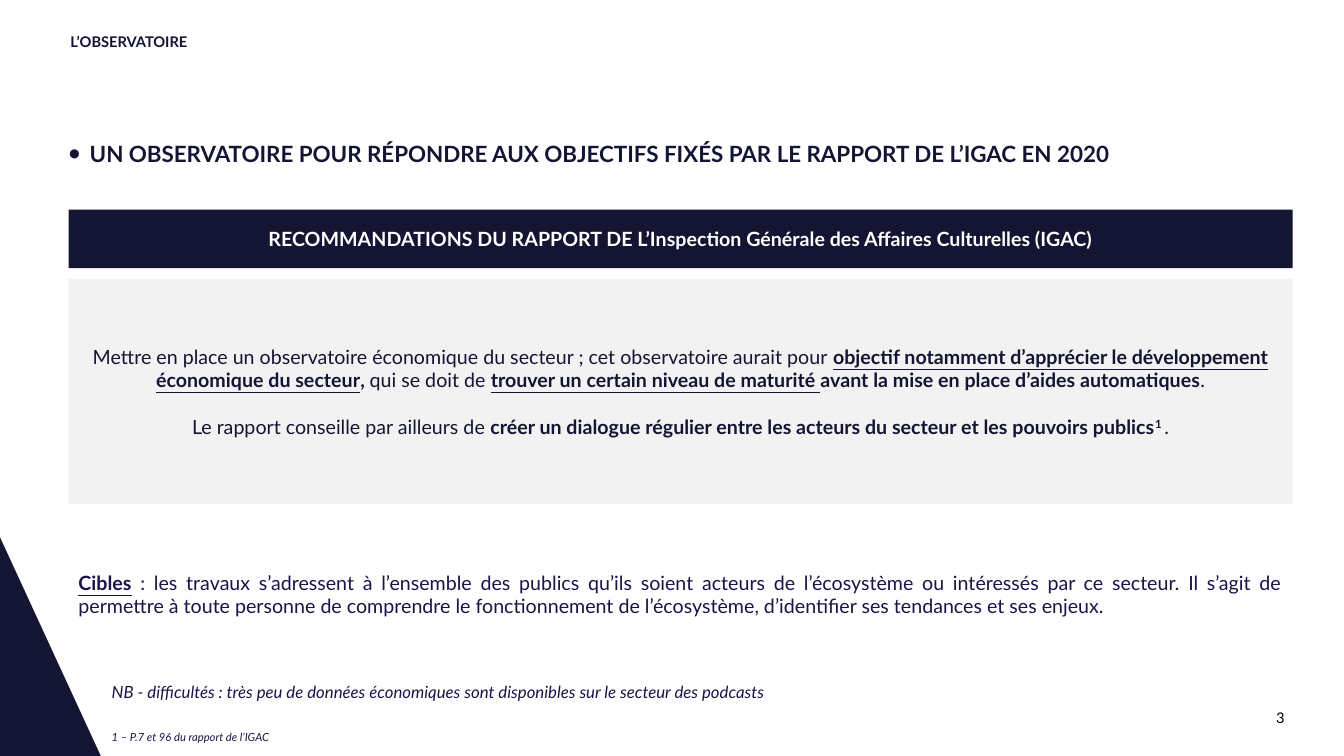
from dataclasses import dataclass

from lxml.etree import SubElement
from pptx import Presentation
from pptx.dml.color import RGBColor
from pptx.enum.shapes import MSO_SHAPE as Preset
from pptx.enum.text import MSO_ANCHOR as Anchor, PP_ALIGN as Align
from pptx.oxml.ns import qn
from pptx.shapes.autoshape import Shape
from pptx.slide import Slide
from pptx.text.text import TextFrame
from pptx.util import Pt

PX = 9144
FONT = "Lato"
NAVY = RGBColor(0x14, 0x14, 0x33)
INDIGO = RGBColor(0x1E, 0x13, 0x48)
PALE = RGBColor(0xF2, 0xF2, 0xF2)
WHITE = RGBColor(0xFF, 0xFF, 0xFF)
BLACK = RGBColor(0x00, 0x00, 0x00)


@dataclass(frozen=True)
class Span:
    """A stretch of text with its emphasis."""
    text: str
    bold: bool = False
    underline: bool = False
    italic: bool = False
    raised: bool = False


@dataclass(frozen=True)
class Block:
    """A box in px with its paragraphs and their format."""
    box: tuple[int, int, int, int]
    paragraphs: tuple[tuple[Span, ...], ...]
    size: float
    color: RGBColor
    align: Align = Align.LEFT
    anchor: Anchor = Anchor.MIDDLE
    insets: tuple[int, int, int, int] = (10, 5, 10, 5)
    fill: RGBColor | None = None
    bullet: bool = False
    line_spacing: float = 1.0


PAGE_TITLE = Block((60, 34, 591, 16), ((Span("L’OBSERVATOIRE", bold=True),),),
                   10.5, NAVY, insets=(10, 0, 10, 0), line_spacing=0.9)
HEADLINE = Block(
    (60, 134, 1214, 35),
    ((Span("UN OBSERVATOIRE POUR RÉPONDRE AUX OBJECTIFS FIXÉS PAR LE RAPPORT "
           "DE L’IGAC EN 2020", bold=True),),),
    16, NAVY, anchor=Anchor.TOP, insets=(8, 5, 10, 5), bullet=True)
RECOMMENDATIONS = Block(
    (68, 277, 1214, 223),
    ((Span("Mettre en place un observatoire économique du secteur ; "
           "cet observatoire aurait pour "),
      Span("objectif notamment d’apprécier le développement économique du secteur",
           bold=True, underline=True),
      Span(", ", bold=True),
      Span("qui se doit de "),
      Span("trouver un certain niveau de maturité ", bold=True, underline=True),
      Span("avant la mise en place d’aides automatiques", bold=True),
      Span(".")),
     (Span("Le rapport conseille par ailleurs de "),
      Span("créer un dialogue régulier entre les acteurs du secteur "
           "et les pouvoirs publics", bold=True),
      Span("1 ", bold=True, raised=True),
      Span("."))),
    14, NAVY, align=Align.CENTER, fill=PALE)
BANNER = Block(
    (68, 208, 1214, 58),
    ((Span("RECOMMANDATIONS DU RAPPORT DE L’Inspection Générale des Affaires "
           "Culturelles (IGAC)", bold=True),),),
    14, WHITE, align=Align.CENTER, fill=NAVY)
CAVEAT = Block(
    (101, 667, 1203, 38),
    ((Span("NB - difficultés : très peu de données économiques sont disponibles "
           "sur le secteur des podcasts", italic=True),),),
    12, INDIGO)
AUDIENCE = Block(
    (68, 530, 1214, 119),
    ((Span("Cibles", bold=True, underline=True),
      Span(" : les travaux s’adressent à l’ensemble des publics qu’ils soient "
           "acteurs de l’écosystème ou intéressés par ce secteur. Il s’agit de "
           "permettre à toute personne de comprendre le fonctionnement de "
           "l’écosystème, d’identifier ses tendances et ses enjeux.")),),
    14, INDIGO, align=Align.JUSTIFY)
FOOTNOTE = Block((101, 712, 1203, 38),
                 ((Span("1 – P.7 et 96 du rapport de l’IGAC", italic=True),),),
                 8, INDIGO)
PAGE_NUMBER = Block((974, 703, 300, 18), ((Span("3"),),), 10.5, BLACK,
                    align=Align.RIGHT, insets=(0, 0, 0, 0))
BLOCKS = (PAGE_NUMBER, HEADLINE, PAGE_TITLE, RECOMMENDATIONS, BANNER, CAVEAT,
          AUDIENCE, FOOTNOTE)


def paint(shape: Shape, color: RGBColor) -> None:
    """Give a shape a flat fill without outline or shadow."""
    shape.fill.solid()
    shape.fill.fore_color.rgb = color
    shape.line.fill.background()
    shape.shadow.inherit = False


def write_text(frame: TextFrame, paragraphs: tuple[tuple[Span, ...], ...], *,
               size: float, color: RGBColor, align: Align, bullet: bool,
               line_spacing: float) -> None:
    """Write formatted paragraphs, one blank line's height apart."""
    for index, spans in enumerate(paragraphs):
        paragraph = frame.add_paragraph() if index else frame.paragraphs[0]
        paragraph.alignment = align
        paragraph.line_spacing = line_spacing
        paragraph.space_before = Pt(size * 1.2 if index else 0)
        if bullet:
            properties = paragraph._p.get_or_add_pPr()
            properties.set("marL", str(21 * PX))
            properties.set("indent", str(-21 * PX))
            SubElement(properties, qn("a:buSzPct"), val="150000")
            SubElement(properties, qn("a:buFont"), typeface="Arial")
            SubElement(properties, qn("a:buChar"), char="•")
        for span in spans:
            run = paragraph.add_run()
            run.text = span.text
            font = run.font
            font.name = FONT
            font.size = Pt(size)
            font.color.rgb = color
            font.bold = span.bold
            font.italic = span.italic
            font.underline = span.underline
            if span.raised:
                run._r.get_or_add_rPr().set("baseline", "30000")


def draw_block(slide: Slide, block: Block) -> None:
    """Draw a block as a filled rectangle or a plain text box."""
    box = [length * PX for length in block.box]
    if block.fill is None:
        shape = slide.shapes.add_textbox(*box)
    else:
        shape = slide.shapes.add_shape(Preset.RECTANGLE, *box)
        paint(shape, block.fill)
    frame = shape.text_frame
    frame.word_wrap = True
    frame.vertical_anchor = block.anchor
    (frame.margin_left, frame.margin_top,
     frame.margin_right, frame.margin_bottom) = (inset * PX for inset in block.insets)
    write_text(frame, block.paragraphs, size=block.size, color=block.color,
               align=block.align, bullet=block.bullet,
               line_spacing=block.line_spacing)


def draw_corner(slide: Slide) -> None:
    """Draw the dark triangle in the bottom left corner."""
    outline = slide.shapes.build_freeform(0, 533, scale=PX)
    outline.add_line_segments([(100, 750), (0, 750)], close=True)
    paint(outline.convert_to_shape(), NAVY)


def main() -> None:
    """Build the slide and save it."""
    presentation = Presentation()
    presentation.slide_width = 1333 * PX
    presentation.slide_height = 750 * PX
    slide = presentation.slides.add_slide(presentation.slide_layouts[6])
    draw_corner(slide)
    for block in BLOCKS:
        draw_block(slide, block)
    presentation.save("out.pptx")


if __name__ == "__main__":
    main()
